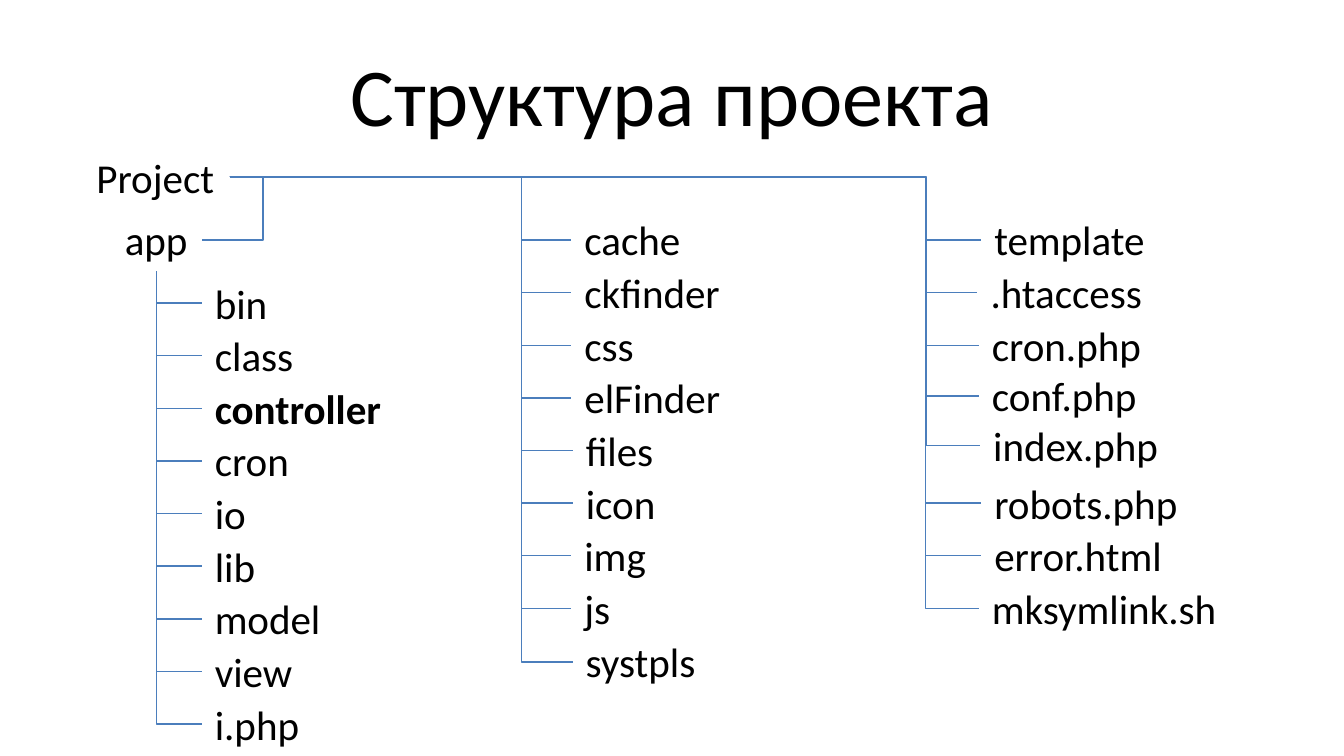
import pptx
import pptx.dml.color
import pptx.enum.shapes
import pptx.enum.text
import pptx.oxml.ns
import pptx.util
from lxml import etree

Pt = pptx.util.Pt
BLACK = pptx.dml.color.RGBColor(0x00, 0x00, 0x00)
BLUE = pptx.dml.color.RGBColor(0x4B, 0x7E, 0xBC)

LABEL_HEIGHT = 33.9
ROW_PITCH = 28.2
LEVEL_TOP = 111.6

APP_ENTRIES = [
    ("bin", 43.9), ("class", 56.9), ("controller", 105.1), ("cron", 55.4),
    ("io", 31.7), ("lib", 36), ("model", 72), ("view", 58.3), ("i.php", 59.8),
]
FOLDERS = [
    ("cache", 66.2), ("ckfinder", 87.8), ("css", 41), ("elFinder", 87.8),
    ("files", 51.1), ("icon", 51.8), ("img", 47.5), ("js", 28.8), ("systpls", 74.2),
]
ROOT_FILES = [
    ("template", 95.8), (".htaccess", 96.5), ("cron.php", 97.2), ("conf.php", 92.9),
    ("index.php", 103.7), ("robots.php", 113.8), ("error.html", 105.1),
    ("mksymlink.sh", 136.1),
]
NUDGES = {
    "files": (0.7, 0), "icon": (0.7, 0), "systpls": (0.7, 0.5),
    ".htaccess": (-2, 0), "cron.php": (-1.3, 0), "conf.php": (-1.3, -1),
    "index.php": (-0.6, -2.6), "mksymlink.sh": (-1.3, 0),
}


def write_text(frame, text, size=22, bold=False, color=BLACK, font="Calibri",
               align=pptx.enum.text.PP_ALIGN.LEFT):
    paragraph = frame.paragraphs[0]
    paragraph.alignment = align
    run = paragraph.add_run()
    run.text = text
    run.font.name = font
    run.font.size = Pt(size)
    run.font.bold = bold
    run.font.color.rgb = color


class TreeSlide:
    def __init__(self, presentation, line_color=BLUE, line_width=0.75):
        self.slide = presentation.slides.add_slide(presentation.slide_layouts[5])
        self.line_color = line_color
        self.line_width = line_width

    def title(self, text, left, top, width, height):
        heading = self.slide.shapes.title
        heading.left, heading.top = Pt(left), Pt(top)
        heading.width, heading.height = Pt(width), Pt(height)
        heading.text_frame.vertical_anchor = pptx.enum.text.MSO_ANCHOR.MIDDLE
        write_text(heading.text_frame, text, size=44,
                   align=pptx.enum.text.PP_ALIGN.CENTER)

    def label(self, text, left, top, width, **style):
        entry = self.slide.shapes.add_textbox(
            Pt(left), Pt(top), Pt(width), Pt(LABEL_HEIGHT))
        entry.text_frame.word_wrap = False
        entry.text_frame.auto_size = pptx.enum.text.MSO_AUTO_SIZE.SHAPE_TO_FIT_TEXT
        write_text(entry.text_frame, text, **style)

    def branch(self, start, end, trunk_x):
        link = self.slide.shapes.add_connector(
            pptx.enum.shapes.MSO_CONNECTOR.ELBOW,
            Pt(start[0]), Pt(start[1]), Pt(end[0]), Pt(end[1]))
        link.line.color.rgb = self.line_color
        link.line.width = Pt(self.line_width)
        qn = pptx.oxml.ns.qn
        properties = link._element.spPr
        geometry = properties.find(qn("a:prstGeom"))
        adjustments = geometry.find(qn("a:avLst"))
        if adjustments is None:
            adjustments = etree.SubElement(geometry, qn("a:avLst"))
        bend = round((trunk_x - start[0]) / (end[0] - start[0]) * 100000)
        etree.SubElement(adjustments, qn("a:gd"), name="adj1", fmla=f"val {bend}")
        etree.SubElement(properties, qn("a:effectLst"))

    def column(self, entries, left, top, start, trunk_x, bold_entry=None):
        for row, (name, width) in enumerate(entries):
            dx, dy = NUDGES.get(name, (0, 0))
            x, y = left + dx, top + row * ROW_PITCH + dy
            self.branch(start, (x, y + LABEL_HEIGHT / 2), trunk_x)
            self.label(name, x, y, width, bold=name == bold_entry)


def main():
    presentation = pptx.Presentation()
    presentation.slide_width, presentation.slide_height = Pt(720), Pt(405)
    tree = TreeSlide(presentation)
    tree.title("Структура проекта", 36, 16.4, 648, 67.5)

    project_end = (123.1, 94.9)
    app_right, app_bottom = 108, (83.8, 145.4)
    tree.label("Project", 44.6, 77.9, 78.5)
    tree.label("app", 59.8, LEVEL_TOP, 48.2)
    tree.branch(project_end, (app_right, LEVEL_TOP + LABEL_HEIGHT / 2), 141)

    tree.column(APP_ENTRIES, 108, 145.4, app_bottom, app_bottom[0],
                bold_entry="controller")
    tree.column(FOLDERS, 306, LEVEL_TOP, project_end, 279.4)
    tree.column(ROOT_FILES, 525.6, LEVEL_TOP, project_end, 496)
    presentation.save("out.pptx")


if __name__ == "__main__":
    main()
